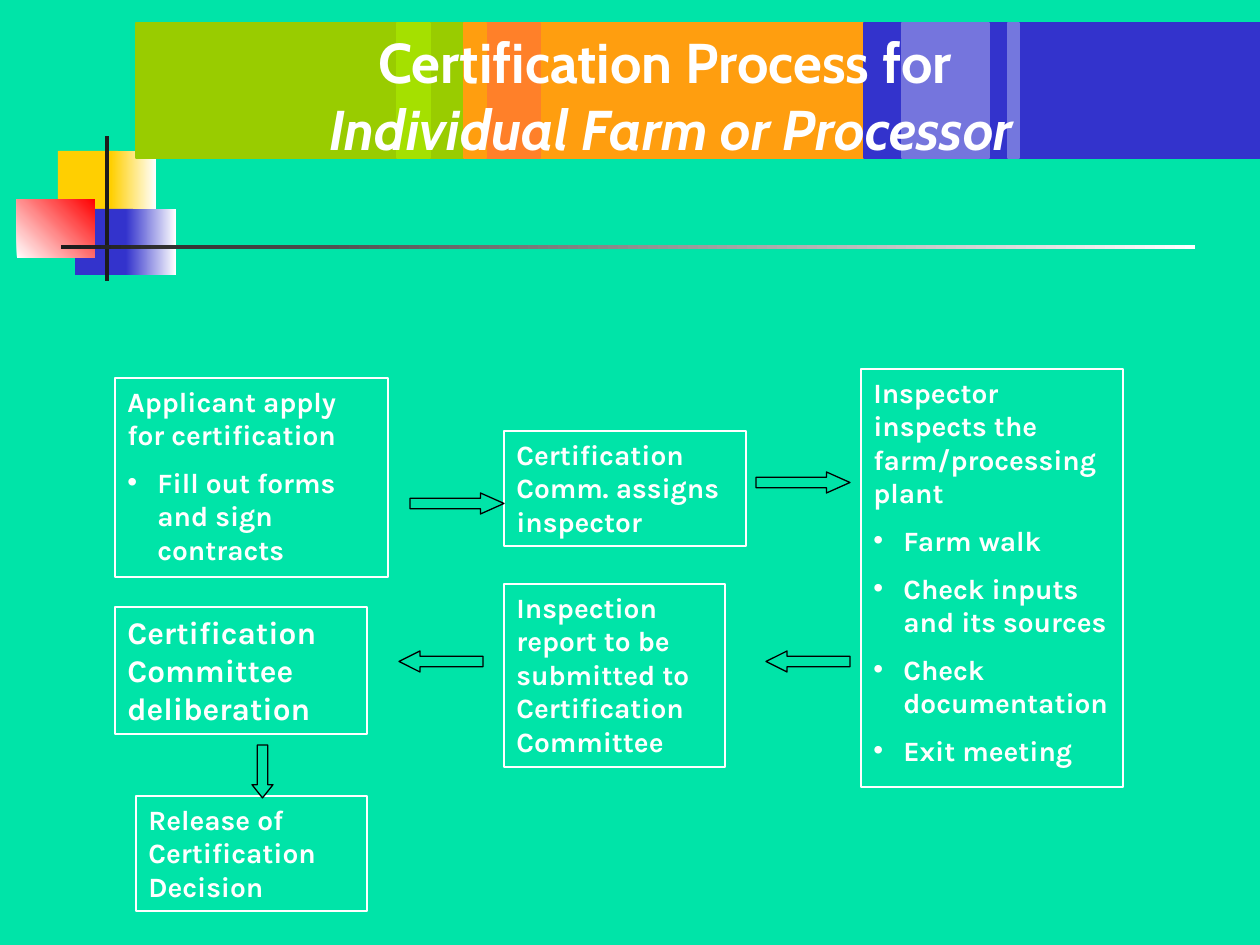
from dataclasses import dataclass

from lxml.etree import SubElement
from pptx import Presentation
from pptx.dml.color import RGBColor
from pptx.enum.shapes import MSO_SHAPE
from pptx.enum.text import MSO_ANCHOR, MSO_AUTO_SIZE, PP_ALIGN
from pptx.oxml.ns import qn
from pptx.util import Pt

EMU_PER_PX = 914400 / 126


def px(length):
    return round(length * EMU_PER_PX)


@dataclass(frozen=True)
class Theme:
    background: str = "00E4A8"
    white: str = "FFFFFF"
    black: str = "000000"
    ink: str = "1C1C1C"
    yellow: str = "FFCF01"
    red: str = "FF0000"
    blue: str = "3333CC"
    lavender: str = "7575DD"
    periwinkle: str = "7477DE"
    green: str = "99CC00"
    lime: str = "A5E000"
    orange: str = "FF9E0F"
    coral: str = "FF8029"
    title_font: str = "Cabin"
    body_font: str = "Karla"
    title_size: int = 32
    step_size: int = 16
    emphasis_size: int = 18
    line_width: float = 0.75
    bullet_indent: int = 30


class SlideBuilder:
    def __init__(self, slide, theme):
        self.slide = slide
        self.theme = theme
        self.paint(slide.background.fill, theme.background)

    def paint(self, fill, color):
        fill.solid()
        fill.fore_color.rgb = RGBColor.from_string(color)

    def style_font(self, font, name, size):
        font.name = name
        font.size = Pt(size)
        font.bold = True
        font.color.rgb = RGBColor.from_string(self.theme.white)

    def shape(self, kind, bounds, fill=None, line=None):
        shape = self.slide.shapes.add_shape(kind, *map(px, bounds))
        shape.shadow.inherit = False
        if fill:
            self.paint(shape.fill, fill)
        else:
            shape.fill.background()
        if line:
            self.paint(shape.line.fill, line)
            shape.line.width = Pt(self.theme.line_width)
        else:
            shape.line.fill.background()
        return shape

    def block(self, bounds, fill, line=None):
        return self.shape(MSO_SHAPE.RECTANGLE, bounds, fill, line)

    def gradient(self, bounds, start, end, angle=0):
        fill = self.block(bounds, start).fill
        fill.gradient()
        fill.gradient_angle = angle
        for stop, color in zip(fill.gradient_stops, (start, end)):
            stop.color.rgb = RGBColor.from_string(color)

    def arrow(self, kind, bounds):
        arrow = self.shape(kind, bounds, self.theme.background, self.theme.black)
        length, thickness = max(bounds[2:]), min(bounds[2:])
        arrow.adjustments[0] = 0.5
        arrow.adjustments[1] = length / thickness / 4

    def bullet(self, paragraph):
        indent = px(self.theme.bullet_indent)
        properties = paragraph._p.get_or_add_pPr()
        properties.set("marL", str(indent))
        properties.set("indent", str(-indent))
        SubElement(properties, qn("a:buFont")).set("typeface", "Arial")
        SubElement(properties, qn("a:buChar")).set("char", "•")

    def step(self, bounds, heading, items=(), size=None):
        size = size or self.theme.step_size
        frame = self.block(bounds, None, self.theme.white).text_frame
        frame.word_wrap = True
        frame.vertical_anchor = MSO_ANCHOR.TOP
        for index, text in enumerate((heading, *items)):
            paragraph = frame.add_paragraph() if index else frame.paragraphs[0]
            paragraph.text = text
            paragraph.alignment = PP_ALIGN.LEFT
            paragraph.space_before = Pt(size / 2)
            if index:
                self.bullet(paragraph)
            self.style_font(paragraph.font, self.theme.body_font, size)

    def title(self, bounds, subject, scope):
        title = self.slide.shapes.title
        title.left, title.top, title.width, title.height = map(px, bounds)
        frame = title.text_frame
        frame.word_wrap = True
        frame.auto_size = MSO_AUTO_SIZE.NONE
        frame.vertical_anchor = MSO_ANCHOR.MIDDLE
        paragraph = frame.paragraphs[0]
        paragraph.alignment = PP_ALIGN.CENTER
        self.style_font(paragraph.font, self.theme.title_font, self.theme.title_size)
        paragraph.add_run().text = subject
        paragraph.add_line_break()
        scope_run = paragraph.add_run()
        scope_run.text = scope
        scope_run.font.italic = True
        title._element.getparent().append(title._element)


def main():
    theme = Theme()
    deck = Presentation()
    deck.slide_width, deck.slide_height = px(1260), px(945)
    builder = SlideBuilder(deck.slides.add_slide(deck.slide_layouts[5]), theme)

    builder.block((58, 151, 60, 66), theme.yellow)
    builder.gradient((111, 151, 45, 66), theme.yellow, theme.white)
    builder.block((75, 209, 58, 66), theme.blue)
    builder.gradient((126, 209, 50, 66), theme.blue, theme.white)
    builder.gradient((17, 199, 78, 59), theme.white, theme.red, 45)
    builder.block((105, 136, 4, 145), theme.ink)
    builder.gradient((61, 245, 1134, 4), theme.ink, theme.white)

    builder.step((115, 378, 273, 199), "Applicant apply for certification",
                 ["Fill out forms and sign contracts"])
    builder.step((504, 431, 242, 115), "Certification Comm. assigns inspector")
    builder.step((861, 369, 262, 418), "Inspector inspects the farm/processing plant",
                 ["Farm walk", "Check inputs and its sources",
                  "Check documentation", "Exit meeting"])
    builder.step((504, 584, 221, 183),
                 "Inspection report to be submitted to Certification Committee")
    builder.step((115, 607, 252, 127), "Certification Committee deliberation",
                 size=theme.emphasis_size)
    builder.step((136, 796, 231, 115), "Release of Certification Decision")

    for kind, bounds in (
        (MSO_SHAPE.RIGHT_ARROW, (410, 493, 94, 21)),
        (MSO_SHAPE.RIGHT_ARROW, (756, 472, 94, 21)),
        (MSO_SHAPE.LEFT_ARROW, (766, 651, 84, 21)),
        (MSO_SHAPE.LEFT_ARROW, (399, 651, 84, 21)),
        (MSO_SHAPE.DOWN_ARROW, (252, 745, 21, 53)),
    ):
        builder.arrow(kind, bounds)

    for left, width, color in (
        (136, 483, theme.green),
        (540, 325, theme.orange),
        (864, 396, theme.blue),
        (902, 87, theme.lavender),
        (486, 54, theme.coral),
        (464, 22, theme.orange),
        (397, 33, theme.lime),
        (1008, 11, theme.periwinkle),
    ):
        builder.block((left, 23, width, 135), color, color)

    builder.title((136, 53, 1071, 84), "Certification Process for ",
                  "Individual Farm or Processor")
    deck.save("out.pptx")


if __name__ == "__main__":
    main()
